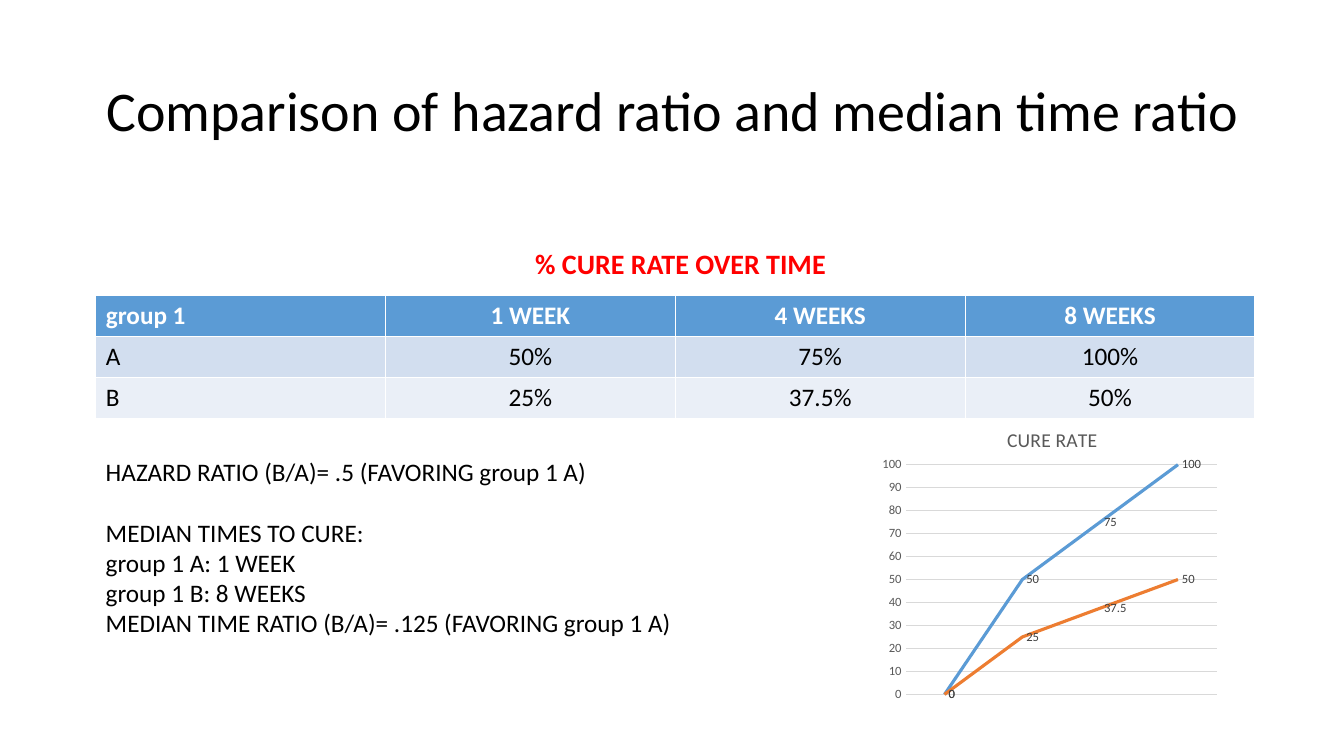
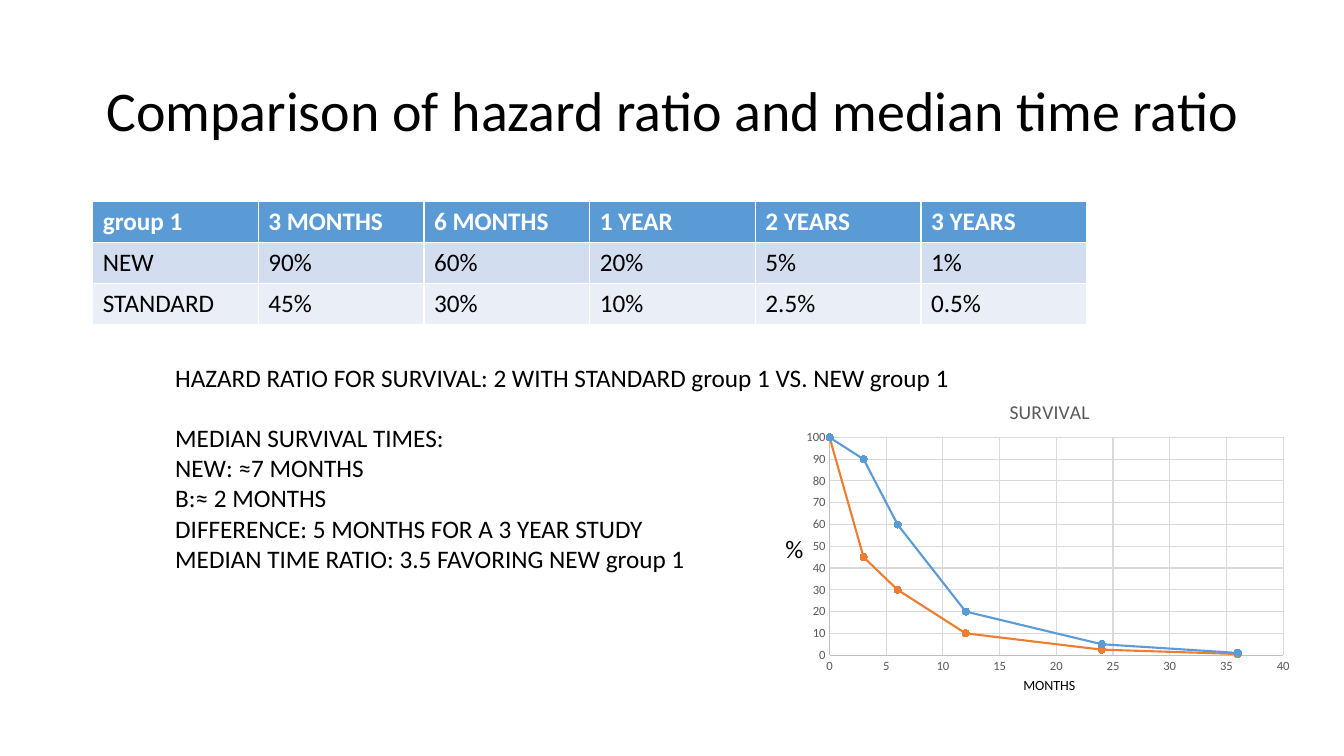
from dataclasses import dataclass
from lxml import etree
from pptx import Presentation
from pptx.chart.data import CategoryChartData, XyChartData
from pptx.dml.color import RGBColor
from pptx.enum.chart import XL_CHART_TYPE, XL_LABEL_POSITION, XL_MARKER_STYLE, XL_TICK_MARK
from pptx.enum.text import MSO_ANCHOR, PP_ALIGN
from pptx.oxml.ns import qn
from pptx.util import Inches, Pt

LINE, SCATTER = XL_CHART_TYPE.LINE, XL_CHART_TYPE.XY_SCATTER_LINES
LEFT, CENTER = PP_ALIGN.LEFT, PP_ALIGN.CENTER
MIDDLE = MSO_ANCHOR.MIDDLE
RIGHT = XL_LABEL_POSITION.RIGHT
CIRCLE = XL_MARKER_STYLE.CIRCLE
NO_TICK = XL_TICK_MARK.NONE
WIDE, HIGH = Inches(13.33), Inches(7.5)


@dataclass(frozen=True)
class Theme:
    font: str = "Calibri"
    black: str = "000000"
    white: str = "FFFFFF"
    red: str = "FF0000"
    head: str = "5B9BD5"
    bands: tuple = ("D2DEEF", "EAEFF7")
    lines: tuple = ("5B9BD5", "ED7D31")
    grid: str = "D9D9D9"
    axis: str = "BFBFBF"
    gray: str = "595959"
    label: str = "404040"
    title: int = 40
    key: int = 20
    body: int = 18
    chart: int = 14
    note: int = 10
    tick: int = 9


T = Theme()
TITLE = "Comparison of hazard ratio and median time ratio"
TITLE_BOX = (6.9, 5.33, 86.25, 19.33)


def scale(box):
    left, top, wide, high = box
    return [round(part * size / 100) for part, size in
            ((left, WIDE), (top, HIGH), (wide, WIDE), (high, HIGH))]


def style(font, size, color, bold=False):
    font.name, font.size, font.bold = T.font, Pt(size), bold
    font.color.rgb = RGBColor.from_string(color)


def stroke(line, color, width):
    line.color.rgb = RGBColor.from_string(color)
    line.width = Pt(width)


def paint(fill, color):
    fill.solid()
    fill.fore_color.rgb = RGBColor.from_string(color)


def add_slide(deck):
    slide = deck.slides.add_slide(deck.slide_layouts[5])
    title = slide.shapes.title
    title.left, title.top, title.width, title.height = scale(TITLE_BOX)
    frame = title.text_frame
    frame.text, frame.vertical_anchor = TITLE, MIDDLE
    line = frame.paragraphs[0]
    line.alignment, line.line_spacing = CENTER, 0.9
    style(line.font, T.title, T.black)
    return slide


def add_text(slide, box, groups, size=T.body, color=T.black, bold=False, wrap=False):
    frame = slide.shapes.add_textbox(*scale(box)).text_frame
    frame.word_wrap = wrap
    para = frame.paragraphs[0]
    for i, group in enumerate(groups):
        for j, text in enumerate(group):
            if i or j:
                para = frame.add_paragraph()
            para.text = text
            if i and not j:
                para.space_before = Pt(size * 1.2)
            style(para.font, size, color, bold)


def add_table(slide, box, rows, align):
    grid = slide.shapes.add_table(len(rows), len(rows[0]), *scale(box)).table
    for r, row in enumerate(rows):
        for c, text in enumerate(row):
            cell = grid.cell(r, c)
            cell.text = text
            paint(cell.fill, T.bands[r - 1] if r else T.head)
            para = cell.text_frame.paragraphs[0]
            para.alignment = align if c else LEFT
            style(para.font, T.body, T.black if r else T.white, not r)


def arrange(node, index, **parts):
    old = node.find(qn("c:layout"))
    if old is not None:
        node.remove(old)
    layout = etree.Element(qn("c:layout"))
    manual = etree.SubElement(layout, qn("c:manualLayout"))
    for name, value in parts.items():
        etree.SubElement(manual, qn("c:" + name)).set("val", str(value))
    node.insert(index, layout)


def set_axis(axis, top, step, line):
    axis.minimum_scale, axis.maximum_scale, axis.major_unit = 0, top, step
    axis.major_tick_mark = axis.minor_tick_mark = NO_TICK
    axis.has_major_gridlines = True
    stroke(axis.major_gridlines.format.line, T.grid, 0.75)
    style(axis.tick_labels.font, T.tick, T.gray)
    if line:
        stroke(axis.format.line, T.axis, 0.75)
    else:
        axis.format.line.fill.background()


def add_chart(slide, box, kind, data, title, spot, area, width):
    chart = slide.shapes.add_chart(kind, *scale(box), data).chart
    style(chart.font, T.note, T.black)
    chart.has_legend = False
    chart.has_title = True
    head = chart.chart_title
    head.text_frame.text = title
    style(head.text_frame.paragraphs[0].font, T.chart, T.gray)
    edge = {"xMode": "edge", "yMode": "edge"}
    arrange(head.element, 1, **edge, x=spot[0], y=spot[1])
    arrange(chart.element.find(".//" + qn("c:plotArea")), 0, layoutTarget="inner",
            **edge, **dict(zip("xywh", area)))
    plot = chart.plots[0]
    plot.vary_by_categories = False
    for row, color in zip(plot.series, T.lines):
        row.smooth = False
        stroke(row.format.line, color, width)
    set_axis(chart.value_axis, 100, 10, kind == SCATTER)
    return chart


def add_cure(slide, box):
    data = CategoryChartData()
    data.categories = ["1", "2", "3", "4"]
    data.add_series("Series 1", (0, 50, 75, 100))
    data.add_series("Series 2", (0, 25, 37.5, 50))
    chart = add_chart(slide, box, LINE, data, "CURE RATE",
                      (0.37, 0.06), (0.09, 0.2, 0.89, 0.76), 2.25)
    chart.category_axis.visible = False
    for row in chart.plots[0].series:
        labels = row.data_labels
        labels.show_value, labels.position = True, RIGHT
        style(labels.font, T.tick, T.label)


def add_curve(slide, box):
    data = XyChartData()
    months = (0, 3, 6, 12, 24, 36)
    for name, values in (("Series 1", (100, 90, 60, 20, 5, 1)),
                         ("Series 2", (100, 45, 30, 10, 2.5, 0.5))):
        series = data.add_series(name)
        for month, value in zip(months, values):
            series.add_data_point(month, value)
    chart = add_chart(slide, box, SCATTER, data, "SURVIVAL",
                      (0.42, 0.06), (0.07, 0.2, 0.9, 0.72), 1.5)
    set_axis(chart.category_axis, 40, 5, True)
    for row, color in zip(chart.plots[0].series, T.lines):
        mark = row.marker
        mark.style, mark.size = CIRCLE, 5
        paint(mark.format.fill, color)
        stroke(mark.format.line, color, 0.75)


def cure_slide(deck):
    slide = add_slide(deck)
    add_table(slide, (7.13, 39.07, 86.25, 16.27), (
        ("group 1", "1 WEEK", "4 WEEKS", "8 WEEKS"),
        ("A", "50%", "75%", "100%"),
        ("B", "25%", "37.5%", "50%")), CENTER)
    add_text(slide, (39.08, 32, 23.33, 5.87), [["% CURE RATE OVER TIME"]],
             T.key, T.red, True)
    add_text(slide, (7.13, 59.73, 53.25, 29.6), (
        ["HAZARD RATIO (B/A)= .5 (FAVORING group 1 A)"],
        ["MEDIAN TIMES TO CURE:",
         "group 1 A: 1 WEEK",
         "group 1 B: 8 WEEKS",
         "MEDIAN TIME RATIO (B/A)= .125 (FAVORING group 1 A)"]), wrap=True)
    add_cure(slide, (65.04, 53.47, 26.03, 40))


def life_slide(deck):
    slide = add_slide(deck)
    add_table(slide, (6.9, 26.67, 73.95, 16.27), (
        ("group 1", "3 MONTHS", "6 MONTHS", "1 YEAR", "2 YEARS", "3 YEARS"),
        ("NEW", "90%", "60%", "20%", "5%", "1%"),
        ("STANDARD", "45%", "30%", "10%", "2.5%", "0.5%")), LEFT)
    add_text(slide, (12.3, 47.2, 69.4, 33.6), (
        ["HAZARD RATIO FOR SURVIVAL: 2 WITH STANDARD group 1 VS. NEW group 1"],
        ["MEDIAN SURVIVAL TIMES:",
         "NEW: ≈7 MONTHS",
         "B:≈ 2 MONTHS",
         "DIFFERENCE: 5 MONTHS FOR A 3 YEAR STUDY",
         "MEDIAN TIME RATIO: 3.5 FAVORING NEW group 1"]), wrap=True)
    add_curve(slide, (59.1, 49.87, 37.5, 40))
    add_text(slide, (57.7, 69.87, 2.85, 5.33), [["%"]])
    add_text(slide, (75.4, 88.8, 5.5, 3.6), [["MONTHS"]], T.note)


def main():
    deck = Presentation()
    deck.slide_width, deck.slide_height = WIDE, HIGH
    cure_slide(deck)
    life_slide(deck)
    deck.save("out.pptx")


if __name__ == "__main__":
    main()
